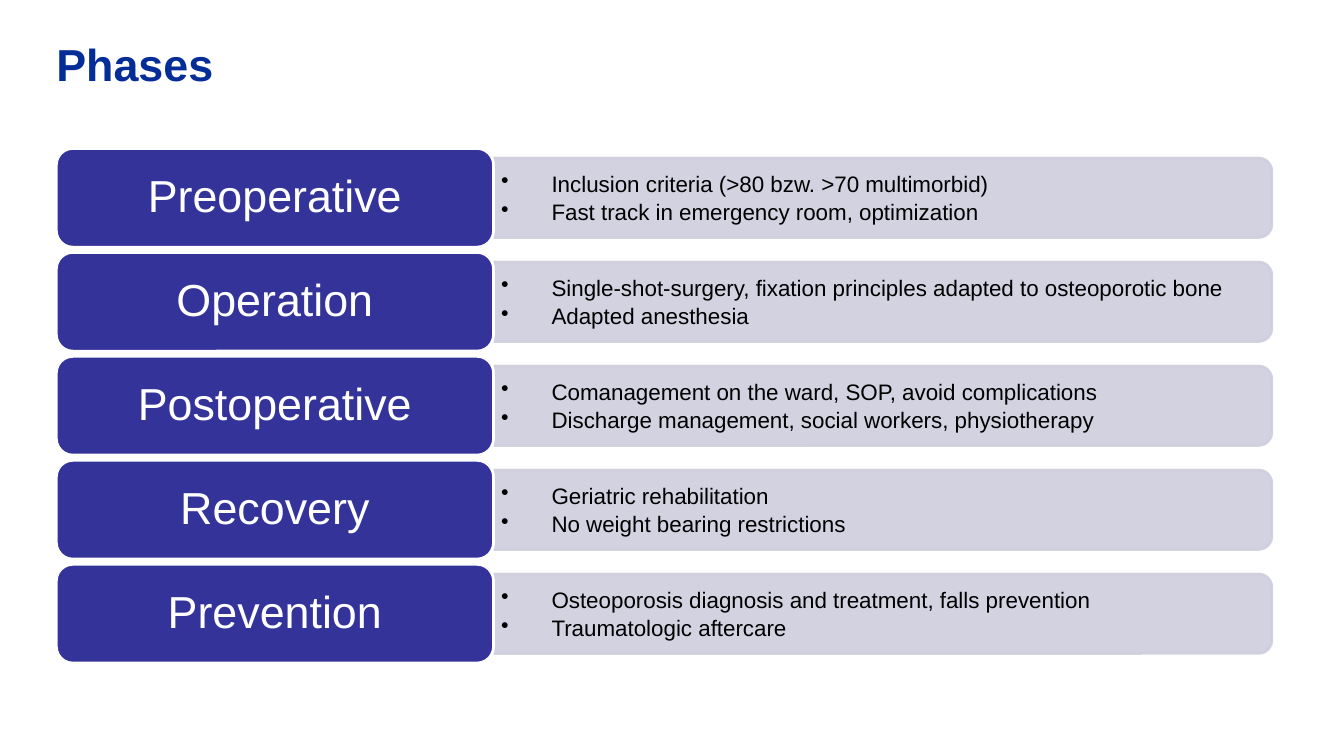
from lxml.etree import SubElement
from pptx import Presentation
from pptx.dml.color import RGBColor
from pptx.enum.shapes import MSO_SHAPE as Preset
from pptx.enum.text import MSO_ANCHOR as Anchor, PP_ALIGN as Align
from pptx.oxml.ns import qn
from pptx.util import Cm, Pt

# Content
TITLE = "Phases"
PHASES = [
    ("Preoperative", ["Inclusion criteria (>80 bzw. >70 multimorbid)",
                      "Fast track in emergency room, optimization"]),
    ("Operation", ["Single-shot-surgery, fixation principles adapted to osteoporotic bone",
                   "Adapted anesthesia"]),
    ("Postoperative", ["Comanagement on the ward, SOP, avoid complications",
                       "Discharge management, social workers, physiotherapy"]),
    ("Recovery", ["Geriatric rehabilitation", "No weight bearing restrictions"]),
    ("Prevention", ["Osteoporosis diagnosis and treatment, falls prevention",
                    "Traumatologic aftercare"]),
]

# Layout in centimetres
LEFT, TOP, PITCH = 1.42, 3.74, 2.62
LABEL_WIDTH, LABEL_HEIGHT = 11.02, 2.49
PANEL_LEFT, PANEL_WIDTH, PANEL_HEIGHT = 12.45, 19.6, 2.0
DETAIL_WIDTH, DETAIL_HEIGHT = 19.53, 1.8

# Formats
TITLE_FONT = {"name": "Arial", "size": Pt(32), "bold": True}
LABEL_FONT = {"name": "Arial", "size": Pt(32)}
DETAIL_FONT = {"name": "Arial", "size": Pt(16)}


def color(value):
    return RGBColor.from_string(value)


def format_font(paragraph, values, hex_color):
    for name, value in values.items():
        setattr(paragraph.font, name, value)
    paragraph.font.color.rgb = color(hex_color)


def format_frame(frame, anchor, side, edge):
    values = {"word_wrap": True, "vertical_anchor": anchor,
              "margin_left": Cm(side), "margin_right": Cm(side),
              "margin_top": Cm(edge), "margin_bottom": Cm(edge)}
    for name, value in values.items():
        setattr(frame, name, value)


def add_block(slide, preset, box, fill, line):
    shape = slide.shapes.add_shape(preset, *map(Cm, box))
    shape.shadow.inherit = False
    shape.fill.solid()
    shape.fill.fore_color.rgb = color(fill)
    shape.line.color.rgb = color(line)
    shape.line.width = Pt(2)
    return shape


def add_panel(slide, middle):
    # The preset is rounded on top, so it is turned to be rounded on the right
    center = PANEL_LEFT + PANEL_WIDTH / 2
    box = (center - PANEL_HEIGHT / 2, middle - PANEL_WIDTH / 2, PANEL_HEIGHT, PANEL_WIDTH)
    panel = add_block(slide, Preset.ROUND_2_SAME_RECTANGLE, box, "CECEDE", "CECEDE")
    panel.rotation = 90
    for tint in panel.element.spPr.iter(qn("a:srgbClr")):
        SubElement(tint, qn("a:alpha"), val="90000")


def add_details(slide, middle, details):
    box = (PANEL_LEFT, middle - DETAIL_HEIGHT / 2, DETAIL_WIDTH, DETAIL_HEIGHT)
    frame = slide.shapes.add_textbox(*map(Cm, box)).text_frame
    format_frame(frame, Anchor.MIDDLE, 0.18, 0.09)
    frame.text = "\n".join(details)
    for index, paragraph in enumerate(frame.paragraphs):
        properties = paragraph._p.get_or_add_pPr()
        properties.set("marL", str(Cm(1.27)))
        properties.set("indent", str(-Cm(1.27)))
        SubElement(properties, qn("a:buChar"), char="•")
        paragraph.space_before = Pt(1 if index else 0)
        format_font(paragraph, DETAIL_FONT, "000000")


def add_label(slide, top, text):
    box = (LEFT, top, LABEL_WIDTH, LABEL_HEIGHT)
    label = add_block(slide, Preset.ROUNDED_RECTANGLE, box, "333399", "FFFFFF")
    format_frame(label.text_frame, Anchor.MIDDLE, 0.33, 0.18)
    label.text_frame.text = text
    paragraph = label.text_frame.paragraphs[0]
    paragraph.alignment = Align.CENTER
    paragraph.line_spacing = 0.9
    format_font(paragraph, LABEL_FONT, "FFFFFF")


def main():
    presentation = Presentation()
    presentation.slide_width, presentation.slide_height = Cm(33.87), Cm(19.05)
    slide = presentation.slides.add_slide(presentation.slide_layouts[5])

    # Title
    title = slide.shapes.title
    title.left, title.top, title.width, title.height = map(Cm, (LEFT, 1.07, 30.66, 2.54))
    format_frame(title.text_frame, Anchor.TOP, 0, 0)
    title.text_frame.text = TITLE
    heading = title.text_frame.paragraphs[0]
    heading.alignment = Align.LEFT
    heading.line_spacing = 0.9
    format_font(heading, TITLE_FONT, "042D98")

    # One row per phase
    for row, (phase, details) in enumerate(PHASES):
        top = TOP + row * PITCH
        middle = top + LABEL_HEIGHT / 2
        add_panel(slide, middle)
        add_details(slide, middle, details)
        add_label(slide, top, phase)

    presentation.save("out.pptx")


if __name__ == "__main__":
    main()
